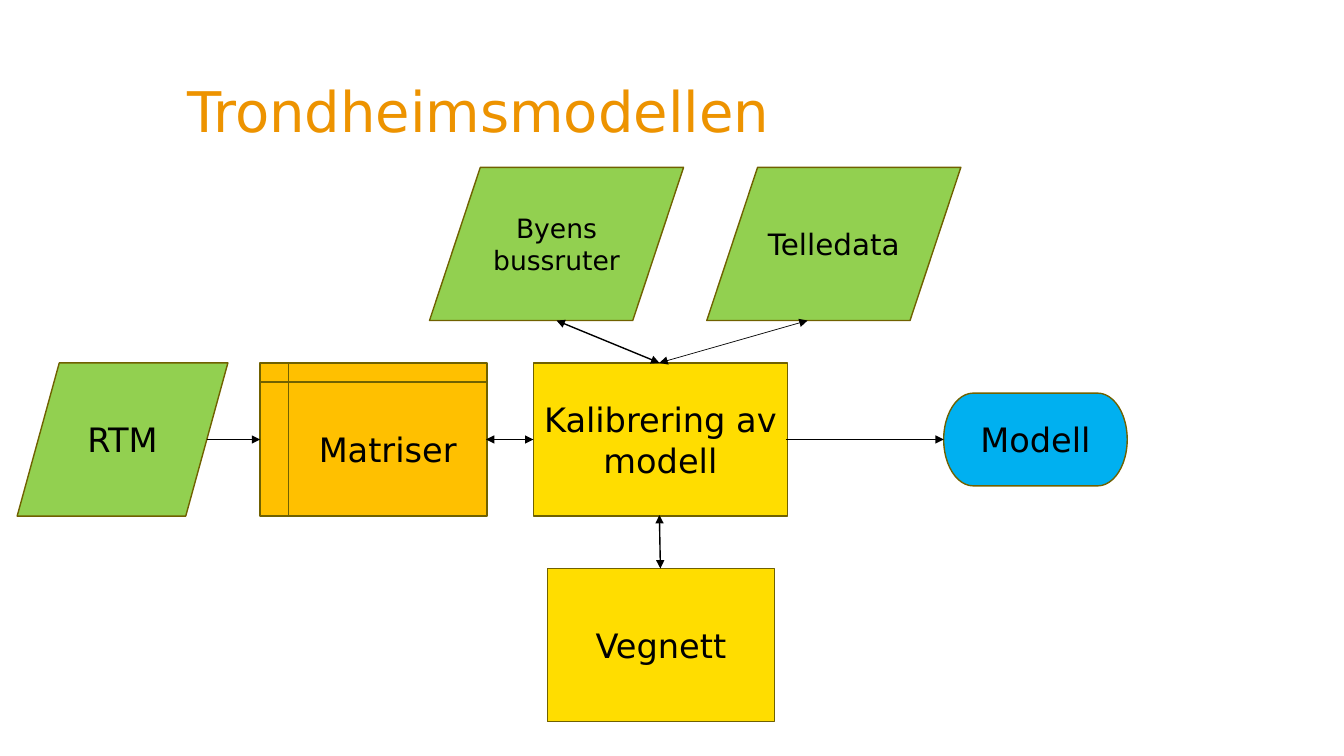
import pptx
import pptx.dml.color
import pptx.enum.shapes
import pptx.enum.text
import pptx.oxml
import pptx.oxml.ns
import pptx.util
from pptx.util import Inches

FONT = "DejaVu Sans"
GREEN, YELLOW, AMBER, BLUE = "92D050", "FFDD00", "FFC000", "00B0F0"
OUTLINE, BLACK, ORANGE = "706100", "000000", "ED9300"
SHAPE = pptx.enum.shapes.MSO_SHAPE
DATA, PROCESS = SHAPE.FLOWCHART_DATA, SHAPE.FLOWCHART_PROCESS

# kind, text, fill, text size, left, top, width, height
STEPS = [
    (PROCESS, "Vegnett", YELLOW, 24, 5.43, 5.64, 2.25, 1.52),
    (DATA, "Telledata", GREEN, 21, 7.01, 1.66, 2.52, 1.52),
    (SHAPE.FLOWCHART_INTERNAL_STORAGE, "Matriser", AMBER, 24, 2.58, 3.6, 2.25, 1.52),
    (PROCESS, "Kalibrering av modell", YELLOW, 24, 5.29, 3.6, 2.52, 1.52),
    (SHAPE.FLOWCHART_TERMINATOR, "Modell", BLUE, 24, 9.36, 3.9, 1.82, 0.92),
    (DATA, "RTM", GREEN, 24, 0.17, 3.6, 2.09, 1.52),
    (DATA, "Byens bussruter", GREEN, 19, 4.26, 1.66, 2.52, 1.52),
]

# start, end, width, both ends pointed
ARROWS = [
    ((7.8, 4.36), (9.36, 4.36), 1, False),
    ((2.05, 4.36), (2.58, 4.36), 1, False),
    ((4.82, 4.36), (5.29, 4.36), 1, True),
    ((5.52, 3.18), (6.54, 3.6), 1, True),
    ((8.01, 3.18), (6.54, 3.6), 0.5, True),
    ((6.55, 5.64), (6.54, 5.11), 1, True),
]


def rgb(value):
    return pptx.dml.color.RGBColor.from_string(value)


def format_text(frame, size, color, align):
    for para in frame.paragraphs:
        para.alignment = align
        for span in para.runs:
            span.font.name = FONT
            span.font.size = pptx.util.Pt(size)
            span.font.color.rgb = rgb(color)


def set_title(page, text):
    title = page.shapes.title
    title.left, title.top = Inches(1.86), Inches(0.76)
    title.width, title.height = Inches(8.3), Inches(0.39)
    frame = title.text_frame
    frame.text = text
    frame.auto_size = pptx.enum.text.MSO_AUTO_SIZE.NONE
    frame.vertical_anchor = pptx.enum.text.MSO_ANCHOR.TOP
    frame.margin_left = frame.margin_right = 0
    frame.margin_top = frame.margin_bottom = 0
    format_text(frame, 40, ORANGE, pptx.enum.text.PP_ALIGN.LEFT)


def add_step(page, kind, text, fill, size, *bounds):
    box = page.shapes.add_shape(kind, *map(Inches, bounds))
    box.shadow.inherit = False
    box.fill.solid()
    box.fill.fore_color.rgb = rgb(fill)
    box.line.color.rgb = rgb(OUTLINE)
    box.line.width = pptx.util.Pt(1)
    frame = box.text_frame
    frame.text = text
    frame.word_wrap = True
    frame.margin_left = frame.margin_right = Inches(0.05)
    frame.vertical_anchor = pptx.enum.text.MSO_ANCHOR.MIDDLE
    format_text(frame, size, BLACK, pptx.enum.text.PP_ALIGN.CENTER)


def add_arrow(page, start, end, width, both_ends):
    arrow = page.shapes.add_connector(
        pptx.enum.shapes.MSO_CONNECTOR.STRAIGHT, *map(Inches, start + end))
    arrow.line.color.rgb = rgb(BLACK)
    arrow.line.width = pptx.util.Pt(width)
    line = arrow.line._get_or_add_ln()
    for tag in ("a:headEnd", "a:tailEnd") if both_ends else ("a:tailEnd",):
        line.append(pptx.oxml.parse_xml(
            f'<{tag} {pptx.oxml.ns.nsdecls("a")} type="triangle"/>'))
    arrow._element.spPr.append(pptx.oxml.parse_xml(
        f'<a:effectLst {pptx.oxml.ns.nsdecls("a")}/>'))


def main():
    deck = pptx.Presentation()
    deck.slide_width, deck.slide_height = Inches(13.33), Inches(7.5)
    page = deck.slides.add_slide(deck.slide_layouts.get_by_name("Title Only"))
    set_title(page, "Trondheimsmodellen")
    for step in STEPS:
        add_step(page, *step)
    for arrow in ARROWS:
        add_arrow(page, *arrow)
    deck.save("out.pptx")


if __name__ == "__main__":
    main()
